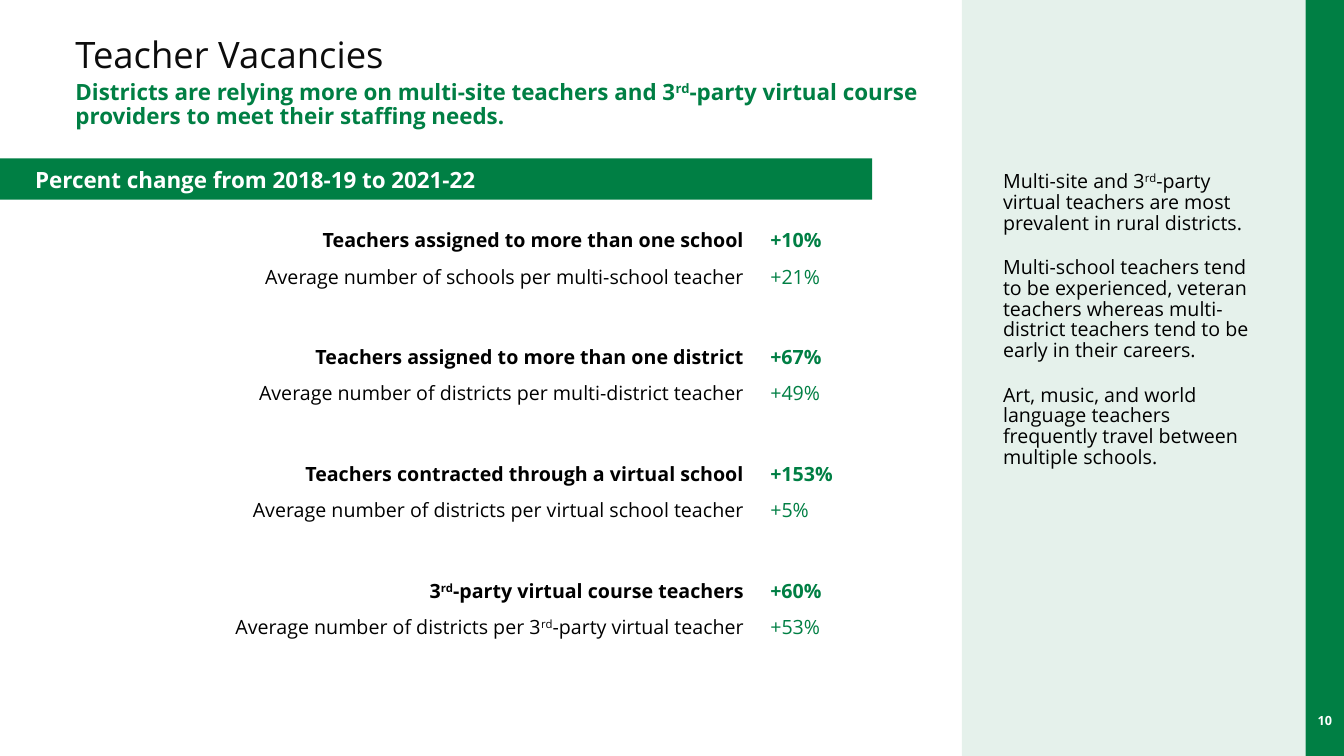
from collections import namedtuple

from lxml import etree
from pptx import Presentation
from pptx.dml.color import RGBColor
from pptx.enum.shapes import MSO_SHAPE as Shape
from pptx.enum.text import MSO_ANCHOR as Anchor, PP_ALIGN as Align
from pptx.oxml.ns import qn
from pptx.util import Emu, Pt

EMU_PER_PX = 9144
FONT = "Open Sans"
COLORS = {"green": "007F44", "white": "FFFFFF", "title": "0C0C0C", "black": "000000"}
Box = namedtuple("Box", "left top width height")

GROUPS = [
    [("Teachers assigned to more than one school", "+10%"),
     ("Average number of schools per multi-school teacher", "+21%")],
    [("Teachers assigned to more than one district", "+67%"),
     ("Average number of districts per multi-district teacher", "+49%")],
    [("Teachers contracted through a virtual school", "+153%"),
     ("Average number of districts per virtual school teacher", "+5%")],
    [("3^rd^-party virtual course teachers", "+60%"),
     ("Average number of districts per 3^rd^-party virtual teacher", "+53%")],
]
REMARKS = [
    "Multi-site and 3^rd^-party virtual teachers are most prevalent in rural districts.",
    "Multi-school teachers tend to be experienced, veteran teachers whereas "
    "multi-district teachers tend to be early in their careers.",
    "Art, music, and world language teachers frequently travel between multiple schools.",
]


def px(length):
    return Emu(length * EMU_PER_PX)


def place(box):
    return [px(length) for length in box]


def write(paragraph, text, size, color, bold=False, align=Align.LEFT, spacing=1.0):
    paragraph.alignment = align
    paragraph.line_spacing = spacing
    for index, part in enumerate(text.split("^")):
        run = paragraph.add_run()
        run.text = part
        run.font.name = FONT
        run.font.size = Pt(size)
        run.font.bold = bold
        run.font.color.rgb = RGBColor.from_string(COLORS[color])
        if index % 2:
            run._r.get_or_add_rPr().set("baseline", "30000")


def add_rectangle(slide, box, color, alpha=None):
    shape = slide.shapes.add_shape(Shape.RECTANGLE, *place(box))
    shape.shadow.inherit = False
    shape.fill.solid()
    shape.fill.fore_color.rgb = RGBColor.from_string(COLORS[color])
    shape.line.fill.background()
    if alpha is not None:
        fill_color = shape._element.spPr.find(qn("a:solidFill"))[0]
        etree.SubElement(fill_color, qn("a:alpha")).set("val", str(alpha * 1000))
    return shape


def add_text_frame(slide, box):
    text_frame = slide.shapes.add_textbox(*place(box)).text_frame
    text_frame.word_wrap = True
    return text_frame


def add_heading(slide, box):
    title = add_text_frame(slide, Box(box.left, box.top, 799, 50))
    write(title.paragraphs[0], "Teacher Vacancies", 26, "title", spacing=0.9)
    subtitle = add_text_frame(slide, Box(box.left, box.top + 44, box.width, box.height - 44))
    write(subtitle.paragraphs[0],
          "Districts are relying more on multi-site teachers and 3^rd^-party virtual course "
          "providers to meet their staffing needs.", 16, "green", bold=True, spacing=0.88)


def add_band(slide, box):
    text_frame = add_rectangle(slide, box, "green").text_frame
    text_frame.word_wrap = True
    text_frame.vertical_anchor = Anchor.MIDDLE
    paragraph = text_frame.paragraphs[0]
    paragraph._p.get_or_add_pPr().set("marL", str(px(25)))
    write(paragraph, "Percent change from 2018-19 to 2021-22", 16, "white", bold=True,
          spacing=1.08)


def add_change_table(slide, box):
    row_count = 3 * len(GROUPS) - 1
    table = slide.shapes.add_table(row_count, 2, *place(box)).table
    table.first_row = table.horz_banding = False
    value_width = 144
    table.columns[0].width = px(box.width - value_width)
    table.columns[1].width = px(value_width)
    for index, row in enumerate(table.rows):
        group, line = divmod(index, 3)
        row.height = px(44 if line == 2 else 36)
        for column, cell in enumerate(row.cells):
            cell.fill.background()
            cell.margin_left = cell.margin_right = px(13)
            cell.margin_top = cell.margin_bottom = px(5)
            if line < 2:
                write(cell.text_frame.paragraphs[0], GROUPS[group][line][column], 14,
                      ("black", "green")[column], bold=line == 0,
                      align=(Align.RIGHT, Align.LEFT)[column])


def add_sidebar(slide, box):
    add_rectangle(slide, box, "green", alpha=10)
    text_frame = add_text_frame(slide, Box(box.left + 31, box.top + 166, box.width - 62, 481))
    for index, remark in enumerate(REMARKS):
        paragraph = text_frame.add_paragraph() if index else text_frame.paragraphs[0]
        if index:
            paragraph.space_before = Pt(17)
        write(paragraph, remark, 14, "black", spacing=0.88)


def add_edge(slide, box):
    add_rectangle(slide, box, "green")
    text_frame = add_text_frame(slide, Box(box.left - 7, box.top + 695, box.width + 14, 40))
    text_frame.vertical_anchor = Anchor.MIDDLE
    write(text_frame.paragraphs[0], "10", 9, "white", bold=True, align=Align.CENTER)


def main():
    presentation = Presentation()
    presentation.slide_width, presentation.slide_height = px(1333), px(750)
    slide = presentation.slides.add_slide(presentation.slide_layouts[6])
    add_edge(slide, Box(1295, 0, 38, 750))
    add_heading(slide, Box(65, 32, 908, 113))
    add_band(slide, Box(0, 157, 865, 41))
    add_change_table(slide, Box(22, 220, 873, 420))
    add_sidebar(slide, Box(954, 0, 341, 750))
    presentation.save("out.pptx")


if __name__ == "__main__":
    main()
